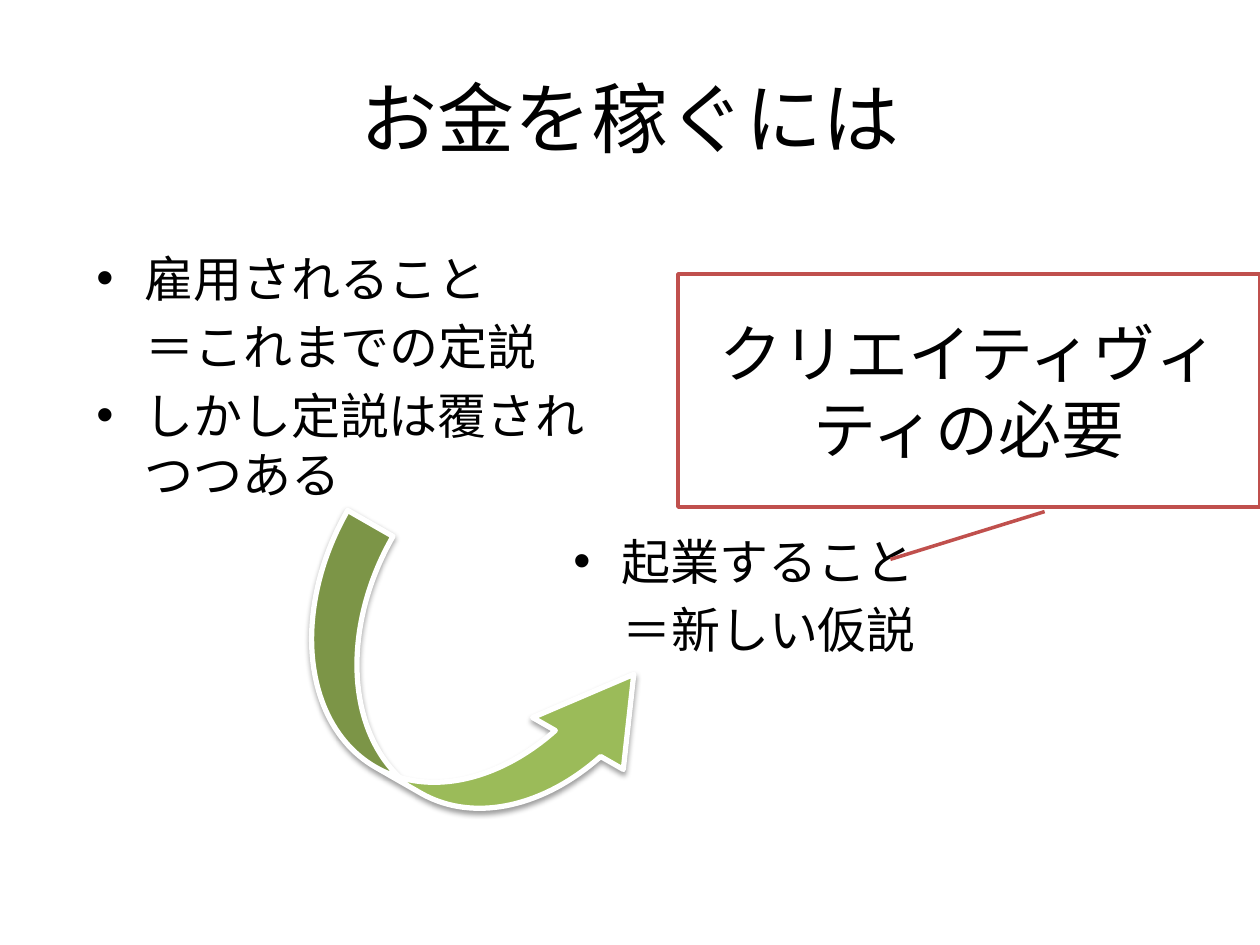
from dataclasses import dataclass

import lxml.etree
import pptx
import pptx.dml.color
import pptx.enum.shapes
import pptx.enum.text
import pptx.oxml.ns
import pptx.util

PX = 914400 / 126  # EMU in one px
FONT = "Calibri"
BLACK, WHITE, GREEN, RED = "000000", "FFFFFF", "9BBB59", "C0504D"
HANGING_INDENT = 48
CENTER = pptx.enum.text.PP_ALIGN.CENTER
SHAPES = pptx.enum.shapes.MSO_SHAPE


@dataclass
class Box:
    left: int
    top: int
    width: int
    height: int

    def emu(self) -> list[int]:
        return [px(n) for n in (self.left, self.top, self.width, self.height)]


@dataclass
class Point:
    text: str
    bullet: bool = False


@dataclass
class PointList:
    box: Box
    points: list[Point]


def px(length: int) -> int:
    return round(length * PX)


def color(value: str) -> pptx.dml.color.RGBColor:
    return pptx.dml.color.RGBColor.from_string(value)


def add_child(parent, tag: str, **attributes):
    return lxml.etree.SubElement(parent, pptx.oxml.ns.qn(tag), attributes)


def write(paragraph, text: str, size: int, align=None, before: float = 0) -> None:
    run = paragraph.add_run()
    run.text = text
    run.font.name = FONT
    run.font.size = pptx.util.Pt(size)
    run.font.color.rgb = color(BLACK)
    paragraph.alignment = align
    paragraph.space_before = pptx.util.Pt(before)


def add_bullet(paragraph) -> None:
    properties = paragraph._p.get_or_add_pPr()
    properties.set("marL", str(px(HANGING_INDENT)))
    properties.set("indent", str(-px(HANGING_INDENT)))
    add_child(properties, "a:buFont", typeface="Arial")
    add_child(properties, "a:buChar", char="•")


def add_point_list(slide, point_list: PointList) -> None:
    frame = slide.shapes.add_textbox(*point_list.box.emu()).text_frame
    frame.word_wrap = True
    for index, point in enumerate(point_list.points):
        paragraph = frame.add_paragraph() if index else frame.paragraphs[0]
        write(paragraph, point.text, 28, before=5.6)
        if point.bullet:
            add_bullet(paragraph)


def add_outlined(slide, kind, box: Box, fill: str, line: str, width: int,
                 adjustments: list[float]):
    shape = slide.shapes.add_shape(kind, *box.emu())
    for index, value in enumerate(adjustments):
        shape.adjustments[index] = value
    shape.fill.solid()
    shape.fill.fore_color.rgb = color(fill)
    shape.line.color.rgb = color(line)
    shape.line.width = pptx.util.Pt(width)
    shape.shadow.inherit = False
    return shape


def add_soft_shadow(shape) -> None:
    effects = shape._element.spPr.find(pptx.oxml.ns.qn("a:effectLst"))
    shadow = add_child(effects, "a:outerShdw", blurRad="40000", dist="20000",
                       dir="5400000", rotWithShape="0")
    shadow_color = add_child(shadow, "a:srgbClr", val=BLACK)
    add_child(shadow_color, "a:alpha", val="38000")


POINT_LISTS = [
    PointList(Box(84, 242, 557, 282), [
        Point("雇用されること", bullet=True),
        Point("　＝これまでの定説"),
        Point("しかし定説は覆されつつある", bullet=True),
    ]),
    PointList(Box(561, 525, 557, 179), [
        Point("起業すること", bullet=True),
        Point("　＝新しい仮説"),
    ]),
]


def main() -> None:
    presentation = pptx.Presentation()
    presentation.slide_width = px(1260)
    presentation.slide_height = px(945)
    slide = presentation.slides.add_slide(presentation.slide_layouts[5])

    # Title
    title = slide.shapes.title
    title.left, title.top, title.width, title.height = Box(63, 38, 1134, 158).emu()
    title.text_frame.vertical_anchor = pptx.enum.text.MSO_ANCHOR.MIDDLE
    write(title.text_frame.paragraphs[0], "お金を稼ぐには", 44, CENTER)

    # Old belief and new hypothesis
    for point_list in POINT_LISTS:
        add_point_list(slide, point_list)

    # Curved arrow from the old to the new
    arrow = add_outlined(slide, SHAPES.CURVED_RIGHT_ARROW, Box(357, 505, 209, 382),
                         GREEN, WHITE, 3, [0.25, 0.5, 0.42])
    arrow.rotation = 299.8
    add_soft_shadow(arrow)

    # Callout
    callout = add_outlined(slide, SHAPES.LINE_CALLOUT_1, Box(678, 274, 582, 233),
                           WHITE, RED, 2, [1.02, 0.63, 1.225, 0.365])
    callout.text_frame.word_wrap = True
    callout.text_frame.vertical_anchor = pptx.enum.text.MSO_ANCHOR.MIDDLE
    write(callout.text_frame.paragraphs[0], "クリエイティヴィティの必要", 36, CENTER)

    presentation.save("out.pptx")


if __name__ == "__main__":
    main()
